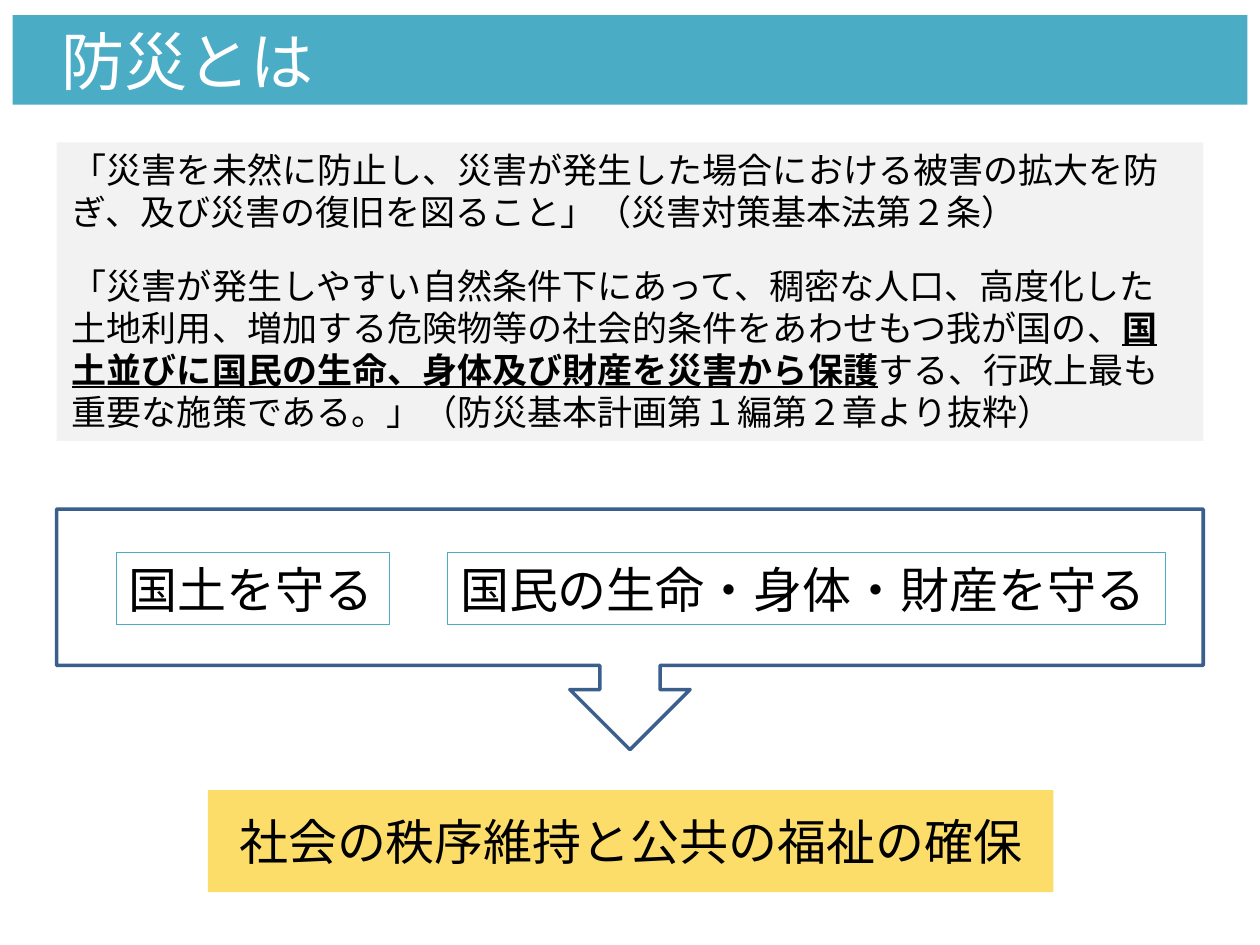
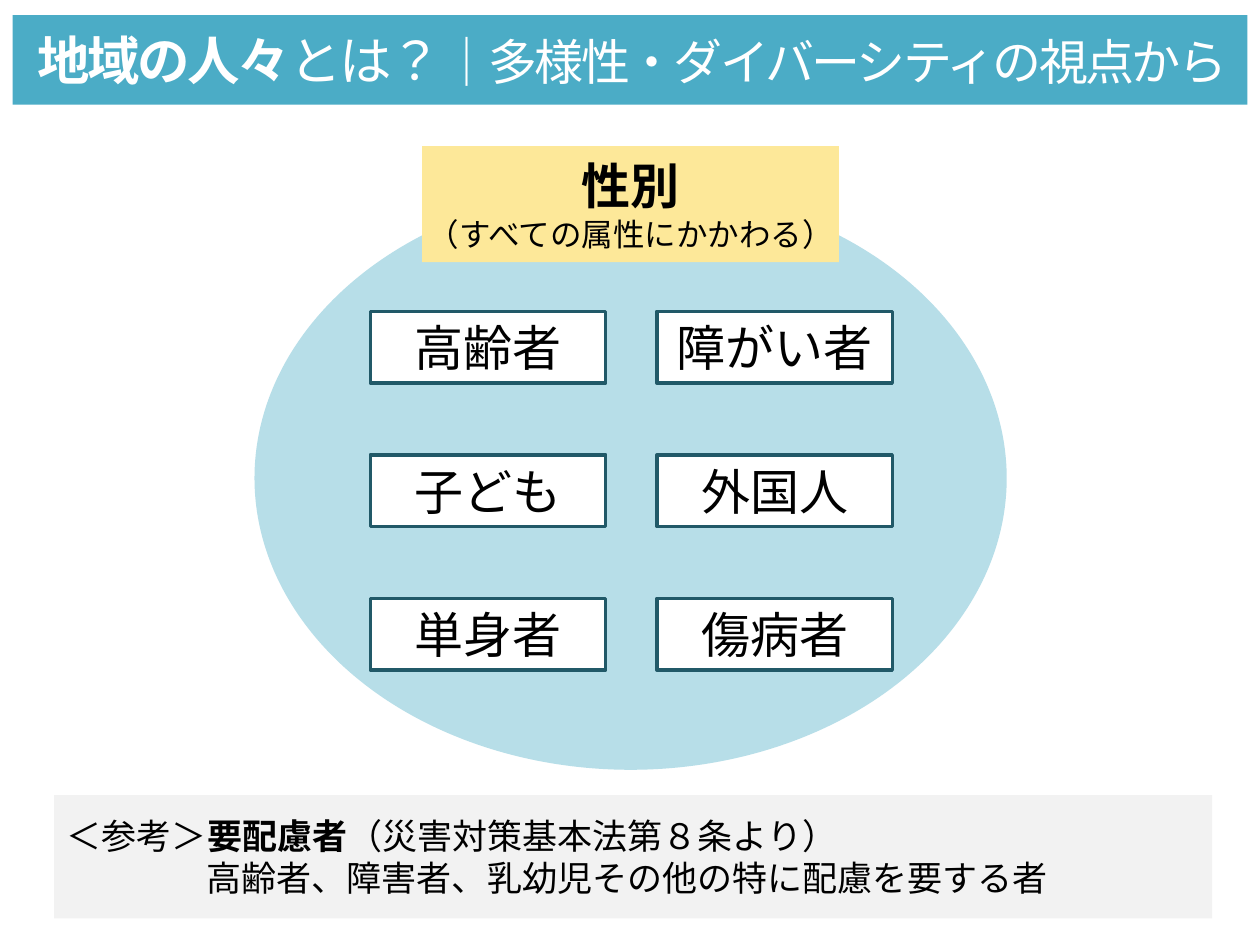
from collections import namedtuple
from itertools import product

from pptx import Presentation
from pptx import util as u
from pptx.dml.color import RGBColor
from pptx.enum import lang, shapes, text

COLUMNS, ROWS = 100, 75
TEAL, GREY, BLACK, WHITE = "4BACC6", "F2F2F2", "000000", "FFFFFF"
GOLD, PALE_GOLD, PALE_BLUE = "FCDD6A", "FDE899", "B7DEE8"
NAVY, DARK_TEAL = "3A5F8C", "215968"
LEFT, CENTER = text.PP_ALIGN.LEFT, text.PP_ALIGN.CENTER
TOP, MIDDLE = text.MSO_ANCHOR.TOP, text.MSO_ANCHOR.MIDDLE
RECT = shapes.MSO_SHAPE.RECTANGLE

deck = Presentation()
deck.slide_width, deck.slide_height = u.Inches(10), u.Inches(7.5)


class Box(namedtuple("Box", "left top width height")):
    """An area measured in columns and rows of the slide grid."""

    def area(self, left, top, width, height):
        """Return the area given by shares of this box."""
        return Box(self.left + left * self.width, self.top + top * self.height,
                   width * self.width, height * self.height)

    def place(self, shape):
        column, row = deck.slide_width / COLUMNS, deck.slide_height / ROWS
        assign(shape, left=round(self.left * column), top=round(self.top * row),
               width=round(self.width * column), height=round(self.height * row))


TITLE_BAND = Box(1, 1.2, 98, 7.1)


def assign(target, **values):
    for name, value in values.items():
        setattr(target, name, value)


def color(code):
    return RGBColor.from_string(code)


def paint(shape, fill=None, line=None, weight=2):
    if fill:
        shape.fill.solid()
        shape.fill.fore_color.rgb = color(fill)
    else:
        shape.fill.background()
    if line:
        shape.line.color.rgb = color(line)
        shape.line.width = u.Pt(weight)
    else:
        shape.line.fill.background()


def add_block(page, box, kind=RECT, **look):
    shape = page.shapes.add_shape(kind, *[0] * 4)
    shape.shadow.inherit = False
    box.place(shape)
    paint(shape, **look)
    return shape


def write(shape, paragraphs, size=28, face="Calibri", ink=BLACK, align=CENTER,
          anchor=MIDDLE, wrap=False, inset=0.1, after=0, spacing=None):
    """Fill a shape with paragraphs, each a list of (words, font values)."""
    frame = shape.text_frame
    assign(frame, word_wrap=wrap, auto_size=text.MSO_AUTO_SIZE.NONE,
           vertical_anchor=anchor, margin_left=u.Inches(inset),
           margin_right=u.Inches(min(inset, 0.12)),
           margin_top=u.Inches(0.05), margin_bottom=u.Inches(0.05))
    for index, spans in enumerate(paragraphs):
        para = frame.add_paragraph() if index else frame.paragraphs[0]
        assign(para, alignment=align, space_before=u.Pt(0), space_after=u.Pt(after))
        for words, values in spans:
            span = para.add_run()
            span.text = words
            style = dict(size=u.Pt(size), name=face, bold=False,
                         language_id=lang.MSO_LANGUAGE_ID.JAPANESE)
            assign(span.font, **{**style, **values})
            span.font.color.rgb = color(ink)
            props = span.font._element
            latin = props.find("{*}latin")
            latin.addnext(props.makeelement(latin.tag.replace("latin", "ea"),
                                            {"typeface": face}))
            if spacing:
                props.set("spc", str(round(spacing * 100)))


def remove_bullets(shape, hanging=0):
    """Clear list marks; indent every paragraph after the first."""
    for index, para in enumerate(shape.text_frame.paragraphs):
        props = para._p.get_or_add_pPr()
        props.set("marL", str(u.Inches(hanging if index else 0)))
        props.set("indent", "0")
        tag = props.find("{*}spcBef").tag.replace("spcBef", "buNone")
        props.append(props.makeelement(tag, {}))


def new_page(title, **style):
    page = deck.slides.add_slide(deck.slide_layouts[1])
    band = page.shapes.title
    TITLE_BAND.place(band)
    paint(band, TEAL)
    write(band, [title], face="Arial", ink=WHITE, align=LEFT, wrap=True, **style)
    return page


def fill_body(page, box, paragraphs, hanging=0, **style):
    body = page.placeholders[1]
    box.place(body)
    paint(body, GREY)
    write(body, paragraphs, size=20, align=LEFT, wrap=True, **style)
    remove_bullets(body, hanging)


def add_protection_callout(page, box):
    for left, width, words in ((0.052, 0.238, "国土を守る"),
                               (0.341, 0.626, "国民の生命・身体・財産を守る")):
        goal = add_block(page, box.area(left, 0.18, width, 0.3),
                         line=TEAL, weight=0.75)
        write(goal, [[(words, {})]], align=LEFT, wrap=True)
    add_block(page, box, shapes.MSO_SHAPE.DOWN_ARROW_CALLOUT, line=NAVY)


def add_diversity_circle(page, box):
    add_block(page, box, shapes.MSO_SHAPE.OVAL, fill=PALE_BLUE)
    groups = ("高齢者", "障がい者", "子ども", "外国人", "単身者", "傷病者")
    for (row, column), words in zip(product(range(3), range(2)), groups):
        cell = box.area(0.154 + 0.381 * column, 0.214 + 0.246 * row, 0.313, 0.123)
        write(add_block(page, cell, fill=WHITE, line=DARK_TEAL), [[(words, {})]])
    gender = add_block(page, box.area(0.223, -0.069, 0.554, 0.199), fill=PALE_GOLD)
    write(gender, [[("性別", {"bold": True})],
                   [("（すべての属性にかかわる）", {"size": u.Pt(18)})]])


def build_definition():
    page = new_page([("防災とは", {})], size=36, inset=0.39)
    fill_body(page, Box(4.5, 11.3, 91, 23.7), [
        [("「災害を未然に防止し、災害が発生した場合における被害の拡大を防ぎ、"
          "及び災害の復旧を図ること」（災害対策基本法第２条）", {})],
        [("「災害が発生しやすい自然条件下にあって、稠密な人口、高度化した土地利用、"
          "増加する危険物等の社会的条件をあわせもつ我が国の、", {}),
         ("国土並びに国民の生命、身体及び財産を災害から保護",
          {"bold": True, "underline": True}),
         ("する、行政上最も重要な施策である。」（防災基本計画第１編第２章より抜粋）", {})],
    ], face="Arial", anchor=TOP, inset=0.12, after=18)
    add_protection_callout(page, Box(4.5, 40.4, 91, 19.1))
    outcome = add_block(page, Box(16.5, 62.7, 67.1, 8.1), fill=GOLD)
    write(outcome, [[("社会の秩序維持と公共の福祉の確保", {})]])


def build_diversity():
    page = new_page([("地域の人々", {"bold": True}), ("とは？", {}),
                     ("｜多様性・ダイバーシティの視点から", {"size": u.Pt(28)})],
                    size=30, inset=0.2, spacing=-1.5)
    fill_body(page, Box(4.3, 63.1, 91.9, 9.8), [
        [("＜参考＞", {}), ("要配慮者", {"bold": True}),
         ("（災害対策基本法第８条より）", {})],
        [("高齢者、障害者、乳幼児その他の特に配慮を要する者", {})],
    ], hanging=1.11, face="Noto Sans CJK JP")
    add_diversity_circle(page, Box(20.2, 14.8, 59.7, 46.3))


if __name__ == "__main__":
    build_definition()
    build_diversity()
    deck.save("out.pptx")
